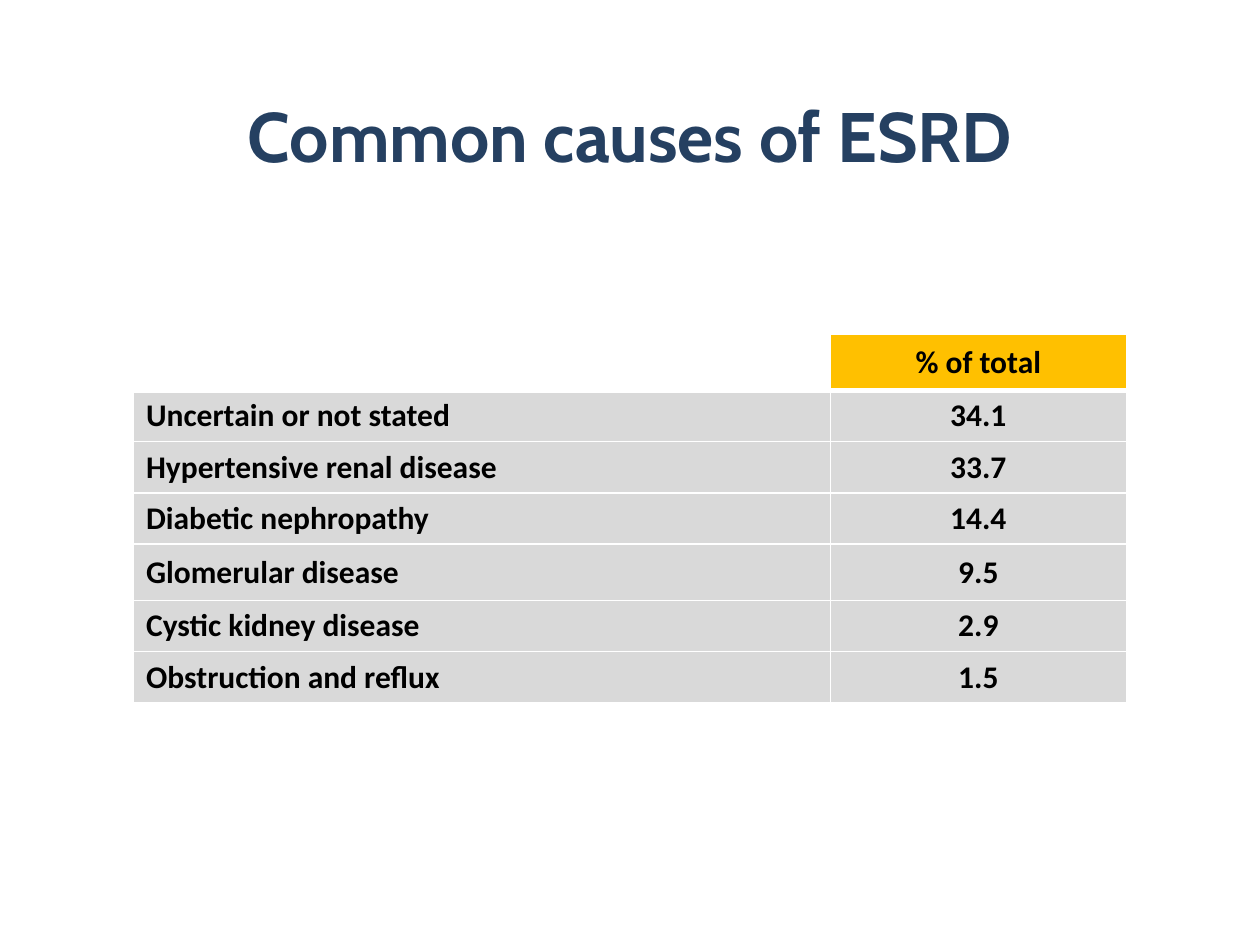
from lxml import etree
from pptx import Presentation
from pptx import util as u
from pptx.dml.color import RGBColor
from pptx.enum import text
from pptx.oxml import ns

CAUSES = [
    ("Uncertain or not stated", "34.1"),
    ("Hypertensive renal disease", "33.7"),
    ("Diabetic nephropathy", "14.4"),
    ("Glomerular disease", "9.5"),
    ("Cystic kidney disease", "2.9"),
    ("Obstruction and reflux", "1.5"),
]
COLUMN_WIDTHS = [5.53, 2.35]
ROW_HEIGHTS = [0.45, 0.4, 0.4, 0.4, 0.45, 0.4, 0.4]


def color(value):
    return RGBColor.from_string(value)


def set_attributes(target, values):
    for name, value in values.items():
        setattr(target, name, value)


def add_border(cell, side, index, width):
    """Draw one white cell edge; edges must precede the fill, in schema order."""
    line = etree.Element(ns.qn(f"a:ln{side}"), w=str(u.Pt(width)))
    fill = etree.SubElement(line, ns.qn("a:solidFill"))
    etree.SubElement(fill, ns.qn("a:srgbClr"), val="FFFFFF")
    cell._tc.get_or_add_tcPr().insert(index, line)


class SlideBuilder:
    title_font = {"name": "Cabin", "size": u.Pt(40), "bold": True}
    table_font = {"name": "Calibri", "size": u.Pt(18), "bold": True}
    title_color, text_color = "254061", "000000"
    header_fill, body_fill = "FFC000", "D9D9D9"

    def __init__(self, slide):
        self.slide = slide

    def add_words(self, para, words, font, font_color, align):
        para.alignment = align
        span = para.add_run()
        span.text = words
        set_attributes(span.font, font)
        span.font.color.rgb = color(font_color)

    def title(self, words, left, top, width, height):
        box = self.slide.shapes.title
        set_attributes(box, {
            "left": u.Inches(left), "top": u.Inches(top),
            "width": u.Inches(width), "height": u.Inches(height),
        })
        set_attributes(box.text_frame, {
            "word_wrap": True,
            "auto_size": text.MSO_AUTO_SIZE.NONE,
            "vertical_anchor": text.MSO_ANCHOR.MIDDLE,
        })
        self.add_words(box.text_frame.paragraphs[0], words, self.title_font,
                       self.title_color, text.PP_ALIGN.CENTER)

    def table(self, rows, left, top, widths, heights):
        table = self.slide.shapes.add_table(
            len(rows), len(widths), u.Inches(left), u.Inches(top),
            u.Inches(sum(widths)), u.Inches(sum(heights))).table
        table.horz_banding = False
        for column, width in zip(table.columns, widths):
            column.width = u.Inches(width)
        for row, height in zip(table.rows, heights):
            row.height = u.Inches(height)
        for r, row in enumerate(rows):
            for c, words in enumerate(row):
                self.cell(table.cell(r, c), words, r, c)

    def cell(self, cell, words, row, column):
        cell.vertical_anchor = text.MSO_ANCHOR.MIDDLE
        if words:
            cell.fill.solid()
            cell.fill.fore_color.rgb = color(self.body_fill if row else self.header_fill)
            align = text.PP_ALIGN.CENTER if column else text.PP_ALIGN.LEFT
            self.add_words(cell.text_frame.paragraphs[0], words, self.table_font,
                           self.text_color, align)
        else:
            cell.fill.background()
        edges = {"L": 1, "R": 1, "T": 3 if row == 1 else 1, "B": 1 if row else 3}
        for index, (side, width) in enumerate(edges.items()):
            add_border(cell, side, index, width)


def main():
    deck = Presentation()
    deck.slide_width, deck.slide_height = u.Inches(10), u.Inches(7.5)
    title_only = deck.slide_layouts[5]
    page = SlideBuilder(deck.slides.add_slide(title_only))
    page.title("Common causes of ESRD", 0.59, 0.44, 8.82, 1.25)
    page.table([("", "% of total"), *CAUSES], 1.06, 2.65, COLUMN_WIDTHS, ROW_HEIGHTS)
    deck.save("out.pptx")


if __name__ == "__main__":
    main()
